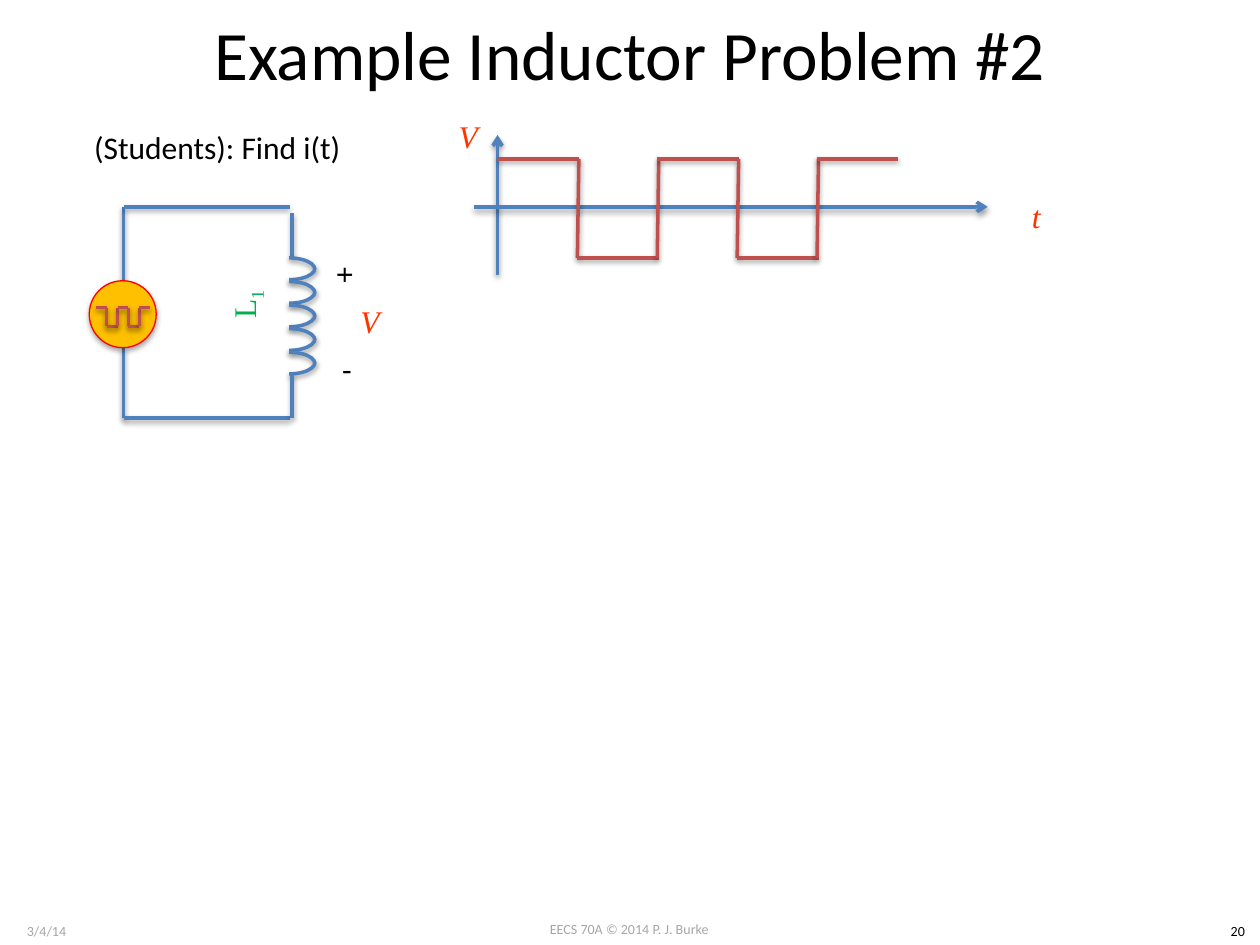
from dataclasses import dataclass
from typing import Any

from lxml.etree import SubElement
from pptx import Presentation
from pptx.dml.color import RGBColor
from pptx.enum.shapes import MSO_CONNECTOR, MSO_SHAPE
from pptx.enum.text import MSO_ANCHOR, PP_ALIGN
from pptx.oxml.ns import qn
from pptx.util import Cm, Pt


@dataclass(frozen=True)
class Theme:
    sans: str = "Calibri"
    serif: str = "Times New Roman"
    ink: str = "000000"
    muted: str = "A6A6A6"
    wire: str = "4F81BD"
    wave: str = "C0504D"
    quantity: str = "FF3300"
    component: str = "00B050"
    source_fill: str = "FFC000"
    source_line: str = "FF0000"
    title_size: float = 39.6
    body_size: float = 18
    footer_size: float = 8
    stroke: float = 2
    outline: float = 0.75


THEME = Theme()


@dataclass(frozen=True)
class Label:
    text: str
    left: float
    top: float
    width: float
    height: float
    color: str = THEME.ink
    font: str = THEME.sans
    size: float = THEME.body_size
    italic: bool = False
    centered: bool = False
    middle: bool = False
    wrap: bool = True
    rotation: float = 0
    subscript: str = ""


@dataclass(frozen=True)
class Wire:
    x1: float
    y1: float
    x2: float
    y2: float
    color: str = THEME.wire
    arrow: bool = False


@dataclass(frozen=True)
class SquareWave:
    left: float
    top: float
    half_period: float
    height: float
    overlap: float = 0


def add_run(paragraph: Any, text: str, font: str, size: float, color: str, italic: bool = False) -> Any:
    run = paragraph.add_run()
    run.text = text
    run.font.name = font
    run.font.size = Pt(size)
    run.font.italic = italic
    run.font.color.rgb = RGBColor.from_string(color)
    return run


def draw_label(shapes: Any, label: Label) -> None:
    box = shapes.add_textbox(Cm(label.left), Cm(label.top), Cm(label.width), Cm(label.height))
    box.rotation = label.rotation
    frame = box.text_frame
    frame.word_wrap = label.wrap
    frame.vertical_anchor = MSO_ANCHOR.MIDDLE if label.middle else MSO_ANCHOR.TOP
    paragraph = frame.paragraphs[0]
    paragraph.alignment = PP_ALIGN.CENTER if label.centered else PP_ALIGN.LEFT
    style = (label.font, label.size, label.color, label.italic)
    add_run(paragraph, label.text, *style)
    if label.subscript:
        lowered = add_run(paragraph, label.subscript, *style)
        lowered.font._element.set("baseline", "-25000")


def add_shadow(item: Any, opacity: int = 38, distance: float = 1.6) -> None:
    effects = SubElement(item._element.spPr, qn("a:effectLst"))
    shadow = SubElement(effects, qn("a:outerShdw"), blurRad=str(Pt(3.1)), dist=str(Pt(distance)),
                        dir="5400000", rotWithShape="0")
    tint = SubElement(shadow, qn("a:srgbClr"), val=THEME.ink)
    SubElement(tint, qn("a:alpha"), val=str(opacity * 1000))


def set_line(item: Any, color: str, width: float = THEME.stroke) -> None:
    item.line.color.rgb = RGBColor.from_string(color)
    item.line.width = Pt(width)


def draw_wire(shapes: Any, wire: Wire) -> None:
    connector = shapes.add_connector(MSO_CONNECTOR.STRAIGHT, Cm(wire.x1), Cm(wire.y1), Cm(wire.x2), Cm(wire.y2))
    set_line(connector, wire.color)
    if wire.arrow:
        SubElement(connector.line._get_or_add_ln(), qn("a:tailEnd"), type="arrow")
    add_shadow(connector)


def draw_source(shapes: Any, left: float, top: float, diameter: float) -> None:
    source = shapes.add_shape(MSO_SHAPE.OVAL, Cm(left), Cm(top), Cm(diameter), Cm(diameter))
    source.fill.solid()
    source.fill.fore_color.rgb = RGBColor.from_string(THEME.source_fill)
    set_line(source, THEME.source_line, THEME.outline)
    add_shadow(source, 35, 1.8)


def draw_quarter_turn(shapes: Any, top: float, flipped: bool) -> None:
    turn = shapes.add_shape(MSO_SHAPE.ARC, Cm(5.31), Cm(top), Cm(1.04), Cm(0.46))
    turn.fill.background()
    set_line(turn, THEME.wire)
    add_shadow(turn)
    if flipped:
        turn._element.spPr.xfrm.set("flipV", "1")


def draw_inductor(shapes: Any, top: float, pitch: float, turns: int) -> None:
    draw_wire(shapes, Wire(5.89, 5.18, 5.89, 4.29))
    for turn in range(turns):
        draw_quarter_turn(shapes, top + turn * pitch, False)
        draw_quarter_turn(shapes, top + turn * pitch - 0.02, True)
    draw_wire(shapes, Wire(5.89, 8.43, 5.89, 7.54))


def draw_square_wave(shapes: Any, wave: SquareWave, levels: int = 5) -> None:
    bottom = wave.top + wave.height
    for index in range(levels):
        start = wave.left + index * wave.half_period
        end = start + wave.half_period + wave.overlap
        level = bottom if index % 2 else wave.top
        draw_wire(shapes, Wire(start, level, end, level, THEME.wave))
        if index < levels - 1:
            draw_wire(shapes, Wire(end, wave.top, end - wave.overlap, bottom, THEME.wave))


def quantity(text: str, left: float, top: float) -> Label:
    return Label(text, left, top, 1.96, 1.55, THEME.quantity, THEME.serif,
                 italic=True, centered=True, middle=True)


def footer(text: str, left: float, top: float, width: float, color: str) -> Label:
    return Label(text, left, top, width, 0.61, color, size=THEME.footer_size, centered=True, wrap=False)


FOOTERS = [
    footer("EECS 70A © 2014 P. J. Burke", 9.73, 18.44, 5.92, THEME.muted),
    footer("3/4/14", 0, 18.47, 1.88, THEME.muted),
    footer("20", 24.51, 18.47, 0.89, THEME.ink),
]
CIRCUIT_WIRES = [
    Wire(2.49, 5.66, 2.49, 4.17),
    Wire(2.49, 7.01, 2.49, 8.43),
    Wire(2.49, 4.17, 5.84, 4.17),
    Wire(2.49, 8.43, 5.84, 8.43),
]
AXES = [
    Wire(10.03, 5.54, 10.03, 2.72, arrow=True),
    Wire(9.55, 4.17, 19.91, 4.17, arrow=True),
]
TASK = Label("(Students): Find i(t)", 1.65, 2.46, 5.72, 1.02, wrap=False)
AXIS_LABELS = [quantity("V", 8.46, 1.96), quantity("t", 19.91, 3.58)]
INDUCTOR_LABELS = [
    Label("+", 6.58, 5.05, 0.84, 1.02, wrap=False, rotation=90),
    Label("-", 6.65, 6.93, 0.71, 1.02, wrap=False),
    quantity("V", 6.48, 5.69),
    Label("L", 3.45, 5.21, 3.02, 1.85, THEME.component, THEME.serif,
          centered=True, middle=True, rotation=270, subscript="1"),
]
WAVES = [SquareWave(10.03, 3.2, 1.61, 2.0, 0.03), SquareWave(1.93, 6.2, 0.22, 0.38)]


def main() -> None:
    deck = Presentation()
    deck.slide_width, deck.slide_height = Cm(25.4), Cm(19.05)
    slide = deck.slides.add_slide(deck.slide_layouts[5])
    shapes = slide.shapes
    title = shapes.title
    title.left, title.top, title.width, title.height = Cm(1.27), Cm(0), Cm(22.86), Cm(2.11)
    title.text_frame.vertical_anchor = MSO_ANCHOR.MIDDLE
    heading = title.text_frame.paragraphs[0]
    heading.alignment = PP_ALIGN.CENTER
    add_run(heading, "Example Inductor Problem #2", THEME.sans, THEME.title_size, THEME.ink)
    for label in [*FOOTERS, TASK, *AXIS_LABELS]:
        draw_label(shapes, label)
    for wire in [*CIRCUIT_WIRES, *AXES]:
        draw_wire(shapes, wire)
    draw_source(shapes, 1.8, 5.66, 1.35)
    inductor = shapes.add_group_shape().shapes
    draw_inductor(inductor, 5.2, 0.475, 5)
    for label in INDUCTOR_LABELS:
        draw_label(inductor, label)
    for wave in WAVES:
        draw_square_wave(shapes.add_group_shape().shapes, wave)
    deck.save("out.pptx")


if __name__ == "__main__":
    main()
